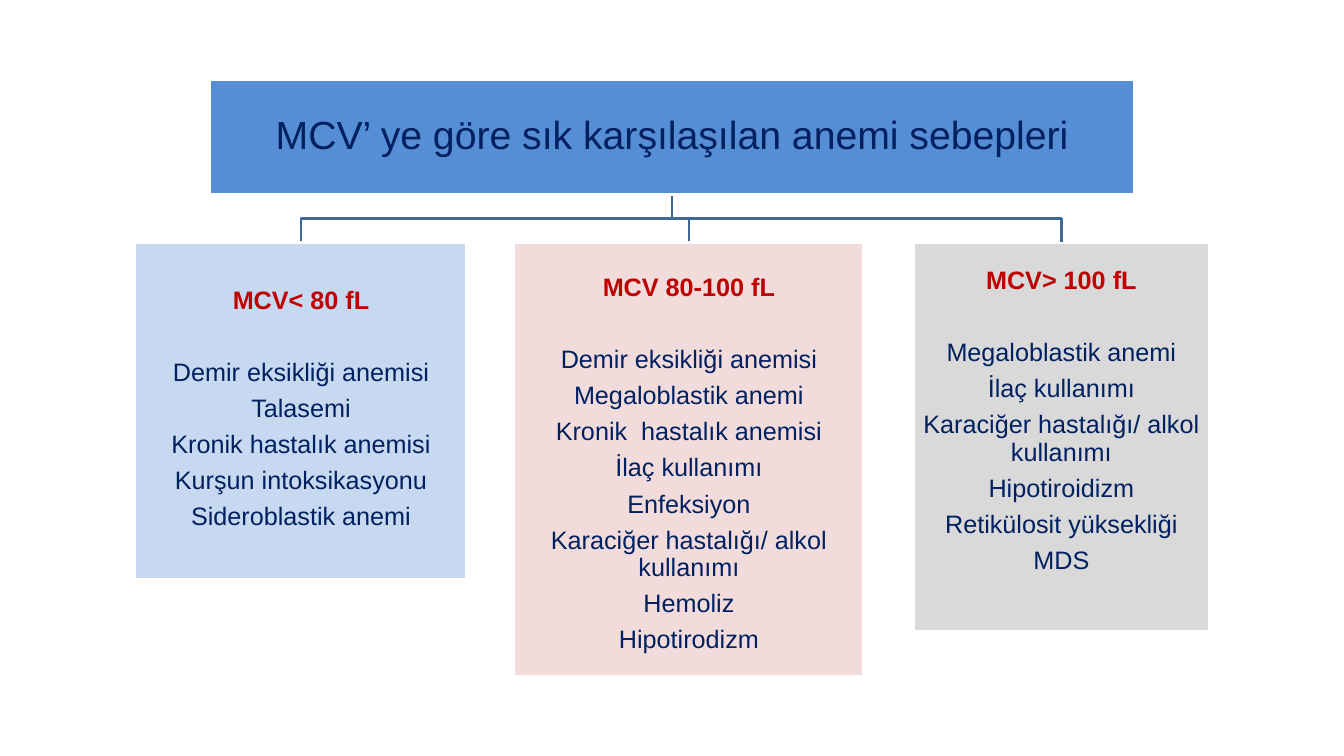
"""Builds a one-slide tree of the common causes of anemia by MCV group."""
from pptx import Presentation
from pptx.dml.color import RGBColor
from pptx.enum.shapes import MSO_SHAPE
from pptx.enum.text import MSO_ANCHOR, PP_ALIGN
from pptx.util import Pt

RECT = MSO_SHAPE.RECTANGLE
TOP, MIDDLE = MSO_ANCHOR.TOP, MSO_ANCHOR.MIDDLE
CENTER = PP_ALIGN.CENTER

TITLE = "MCV’ ye göre sık karşılaşılan anemi sebepleri"
GROUPS = [
    {"head": "MCV< 80 fL", "fill": "C6D9F1",
     "left": 96.5, "width": 237, "height": 240.5, "inset": 32,
     "causes": ["Demir eksikliği anemisi", "Talasemi", "Kronik hastalık anemisi",
                "Kurşun intoksikasyonu", "Sideroblastik anemi"]},
    {"head": "MCV 80-100 fL", "fill": "F2DCDB",
     "left": 367.2, "width": 249.8, "height": 309.6, "inset": 23,
     "causes": ["Demir eksikliği anemisi", "Megaloblastik anemi",
                "Kronik  hastalık anemisi", "İlaç kullanımı", "Enfeksiyon",
                "Karaciğer hastalığı/ alkol kullanımı", "Hemoliz", "Hipotirodizm"]},
    {"head": "MCV> 100 fL", "fill": "D9D9D9",
     "left": 652.3, "width": 211.7, "height": 277.2, "inset": 18,
     "causes": ["Megaloblastik anemi", "İlaç kullanımı",
                "Karaciğer hastalığı/ alkol kullanımı", "Hipotiroidizm",
                "Retikülosit yüksekliği", "MDS"]},
]

NAVY, RED, BLUE, WHITE, LINE = "002060", "C00000", "558ED5", "FFFFFF", "3F6797"
SLIDE_W, SLIDE_H = 960, 540
TITLE_W, TITLE_H, TITLE_TOP = 660, 82, 57
TITLE_BOTTOM = TITLE_TOP + TITLE_H
GROUP_TOP = 173.5
BUS_Y = (TITLE_BOTTOM + GROUP_TOP) / 2
LINE_SPACING, AFTER, HEAD_AFTER = 0.9, 6.3, 32


def color(value):
    return RGBColor.from_string(value)


def add_branch(s, x):
    mid = SLIDE_W / 2
    points = [(mid, BUS_Y), (x, BUS_Y), (x, GROUP_TOP)]
    fb = s.shapes.build_freeform(Pt(mid), Pt(TITLE_BOTTOM))
    fb.add_line_segments([(Pt(px), Pt(py)) for px, py in points], close=False)
    sp = fb.convert_to_shape()
    sp.shadow.inherit = False
    sp.fill.background()
    sp.line.color.rgb = color(LINE)
    sp.line.width = Pt(2)


def add_box(s, left, top, width, height, fill, lines, anchor, inset):
    sp = s.shapes.add_shape(RECT, Pt(left), Pt(top), Pt(width), Pt(height))
    sp.shadow.inherit = False
    sp.fill.solid()
    sp.fill.fore_color.rgb = color(fill)
    sp.line.color.rgb = color(WHITE)
    sp.line.width = Pt(2)
    tf = sp.text_frame
    tf.word_wrap = True
    tf.vertical_anchor = anchor
    tf.margin_left = tf.margin_right = tf.margin_bottom = Pt(1)
    tf.margin_top = Pt(inset)
    for i, (text, size, ink, bold, after) in enumerate(lines):
        p = tf.add_paragraph() if i else tf.paragraphs[0]
        p.alignment = CENTER
        p.line_spacing = LINE_SPACING
        p.space_after = Pt(after)
        r = p.add_run()
        r.text = text
        r.font.name = "Arial"
        r.font.size = Pt(size)
        r.font.bold = bold
        r.font.color.rgb = color(ink)


def main():
    prs = Presentation()
    prs.slide_width, prs.slide_height = Pt(SLIDE_W), Pt(SLIDE_H)
    s = prs.slides.add_slide(prs.slide_layouts[6])
    for group in reversed(GROUPS):
        add_branch(s, group["left"] + group["width"] / 2)
    add_box(s, (SLIDE_W - TITLE_W) / 2, TITLE_TOP, TITLE_W, TITLE_H, BLUE,
            [(TITLE, 28, NAVY, False, 0)], MIDDLE, 1)
    for group in GROUPS:
        lines = [(group["head"], 18, RED, True, HEAD_AFTER)]
        lines += [(cause, 18, NAVY, False, AFTER) for cause in group["causes"]]
        add_box(s, group["left"], GROUP_TOP, group["width"], group["height"],
                group["fill"], lines, TOP, group["inset"])
    prs.save("out.pptx")


if __name__ == "__main__":
    main()
